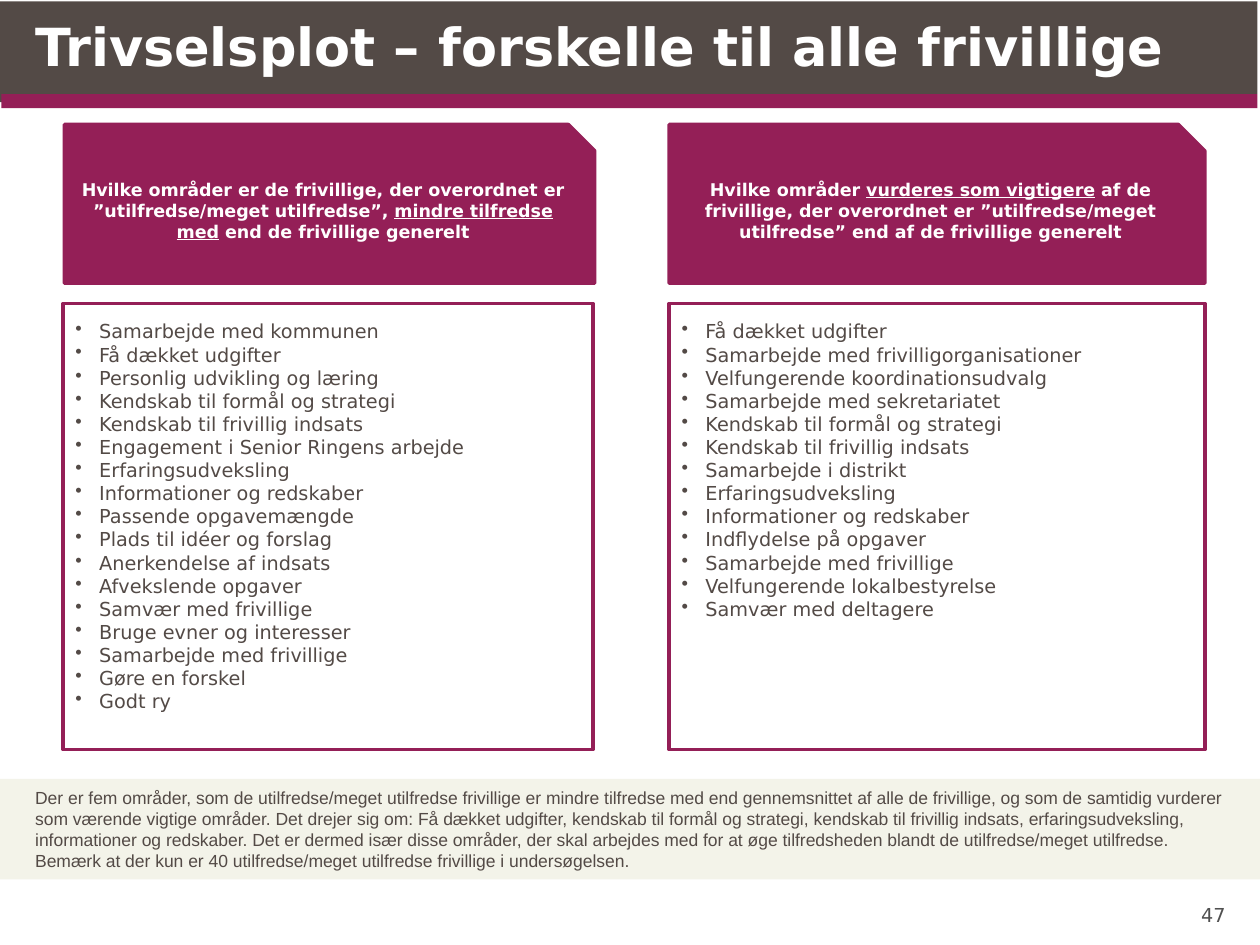
import pptx
import pptx.util
import pptx.dml.color
import pptx.enum.shapes
import pptx.enum.text
import lxml.etree

Cm = pptx.util.Cm
Pt = pptx.util.Pt
RGB = pptx.dml.color.RGBColor
KIND = pptx.enum.shapes.MSO_SHAPE
ALIGN = pptx.enum.text.PP_ALIGN
MID = pptx.enum.text.MSO_ANCHOR.MIDDLE

BROWN = RGB(0x53, 0x4A, 0x46)
PLUM = RGB(0x94, 0x1F, 0x57)
CREAM = RGB(0xF3, 0xF3, 0xE9)
GREY = RGB(0x50, 0x50, 0x50)
WHITE = RGB(0xFF, 0xFF, 0xFF)
SANS = "DejaVu Sans"

TITLE = "Trivselsplot – forskelle til alle frivillige"
NOTE = (
    "Der er fem områder, som de utilfredse/meget utilfredse frivillige er mindre "
    "tilfredse med end gennemsnittet af alle de frivillige, og som de samtidig "
    "vurderer som værende vigtige områder. Det drejer sig om: Få dækket udgifter, "
    "kendskab til formål og strategi, kendskab til frivillig indsats, "
    "erfaringsudveksling, informationer og redskaber. Det er dermed især disse "
    "områder, der skal arbejdes med for at øge tilfredsheden blandt de "
    "utilfredse/meget utilfredse. Bemærk at der kun er 40 utilfredse/meget "
    "utilfredse frivillige i undersøgelsen."
)
LESS = (
    "Hvilke områder er de frivillige, der overordnet er ”utilfredse/meget utilfredse”, ",
    "mindre tilfredse med",
    " end de frivillige generelt",
)
MORE = (
    "Hvilke områder ",
    "vurderes som vigtigere",
    " af de frivillige, der overordnet er ”utilfredse/meget utilfredse” "
    "end af de frivillige generelt",
)
LEFT = (
    "Samarbejde med kommunen",
    "Få dækket udgifter",
    "Personlig udvikling og læring",
    "Kendskab til formål og strategi",
    "Kendskab til frivillig indsats",
    "Engagement i Senior Ringens arbejde",
    "Erfaringsudveksling",
    "Informationer og redskaber",
    "Passende opgavemængde",
    "Plads til idéer og forslag",
    "Anerkendelse af indsats",
    "Afvekslende opgaver",
    "Samvær med frivillige",
    "Bruge evner og interesser",
    "Samarbejde med frivillige",
    "Gøre en forskel",
    "Godt ry",
)
RIGHT = (
    "Få dækket udgifter",
    "Samarbejde med frivilligorganisationer",
    "Velfungerende koordinationsudvalg",
    "Samarbejde med sekretariatet",
    "Kendskab til formål og strategi",
    "Kendskab til frivillig indsats",
    "Samarbejde i distrikt",
    "Erfaringsudveksling",
    "Informationer og redskaber",
    "Indflydelse på opgaver",
    "Samarbejde med frivillige",
    "Velfungerende lokalbestyrelse",
    "Samvær med deltagere",
)


def style(run, size, color, face=SANS, bold=False):
    """Set the font of one run."""
    font = run.font
    font.size, font.name, font.bold = Pt(size), face, bold
    font.color.rgb = color


def add_box(slide, area, fill=None, line=None, kind=KIND.RECTANGLE):
    """Add a flat shape with an optional fill and outline."""
    box = slide.shapes.add_shape(kind, *map(Cm, area))
    box.shadow.inherit = False
    if fill is None:
        box.fill.background()
    else:
        box.fill.solid()
        box.fill.fore_color.rgb = fill
    if line is None:
        box.line.fill.background()
    else:
        box.line.color.rgb = line
        box.line.width = Pt(2)
    return box


def add_text(slide, area, text, size, color, face=SANS, bold=False):
    """Add a wrapped text box without margins and return its frame."""
    frame = slide.shapes.add_textbox(*map(Cm, area)).text_frame
    frame.word_wrap = True
    frame.margin_left = frame.margin_right = 0
    frame.margin_top = frame.margin_bottom = 0
    frame.text = text
    style(frame.paragraphs[0].runs[0], size, color, face, bold)
    return frame


def add_head(slide, area, parts):
    """Add a snipped heading whose middle part is underlined."""
    box = add_box(slide, area, PLUM, PLUM, KIND.SNIP_1_RECTANGLE)
    frame = box.text_frame
    frame.word_wrap = True
    frame.vertical_anchor = MID
    para = frame.paragraphs[0]
    para.alignment = ALIGN.CENTER
    for spot, part in enumerate(parts):
        run = para.add_run()
        run.text = part
        style(run, 10, WHITE, bold=True)
        run.font.underline = spot == 1


def add_list(slide, area, items):
    """Add a bulleted list in a text box."""
    frame = slide.shapes.add_textbox(*map(Cm, area)).text_frame
    frame.word_wrap = True
    frame.text = "\n".join(items)
    for para in frame.paragraphs:
        props = para._p.get_or_add_pPr()
        props.set("marL", str(Cm(0.48)))
        props.set("indent", str(-Cm(0.48)))
        mark = lxml.etree.SubElement(props, pptx.oxml.ns.qn("a:buChar"))
        mark.set("char", "•")
        style(para.runs[0], 11, BROWN)


def add_column(slide, left, shift, width, head, items):
    """Add a heading above a framed list."""
    add_box(slide, (left, 6.12, width, 8.99), line=PLUM)
    add_head(slide, (left + shift, 2.51, width, 3.2), head)
    add_list(slide, (left, 6.32, width, 8.26), items)


def main():
    """Build and save the slide."""
    deck = pptx.Presentation()
    deck.slide_width, deck.slide_height = Cm(25.4), Cm(19.05)
    slide = deck.slides.add_slide(deck.slide_layouts[6])
    add_box(slide, (0, 0.03, 25.4, 2.03), BROWN)
    add_box(slide, (0.03, 1.9, 25.35, 0.28), PLUM)
    add_box(slide, (25.35, 0, 0.05, 19.05), WHITE)
    add_box(slide, (0, 19, 25.4, 0.05), WHITE)
    add_box(slide, (0, 15.7, 25.4, 2.03), CREAM)

    page = add_text(slide, (23.72, 17.63, 0.99, 1.04), "47", 11, GREY)
    page.vertical_anchor = pptx.enum.text.MSO_ANCHOR.BOTTOM
    page.paragraphs[0].alignment = ALIGN.RIGHT
    note = add_text(slide, (0.71, 15.7, 24, 2.03), NOTE, 10, BROWN, "Arial")
    note.vertical_anchor = MID
    add_text(slide, (0.71, 0.28, 24, 1.8), TITLE, 30, WHITE, bold=True)

    add_column(slide, 1.27, 0.03, 10.69, LESS, LEFT)
    add_column(slide, 13.49, 0, 10.8, MORE, RIGHT)
    deck.save("out.pptx")


if __name__ == "__main__":
    main()
